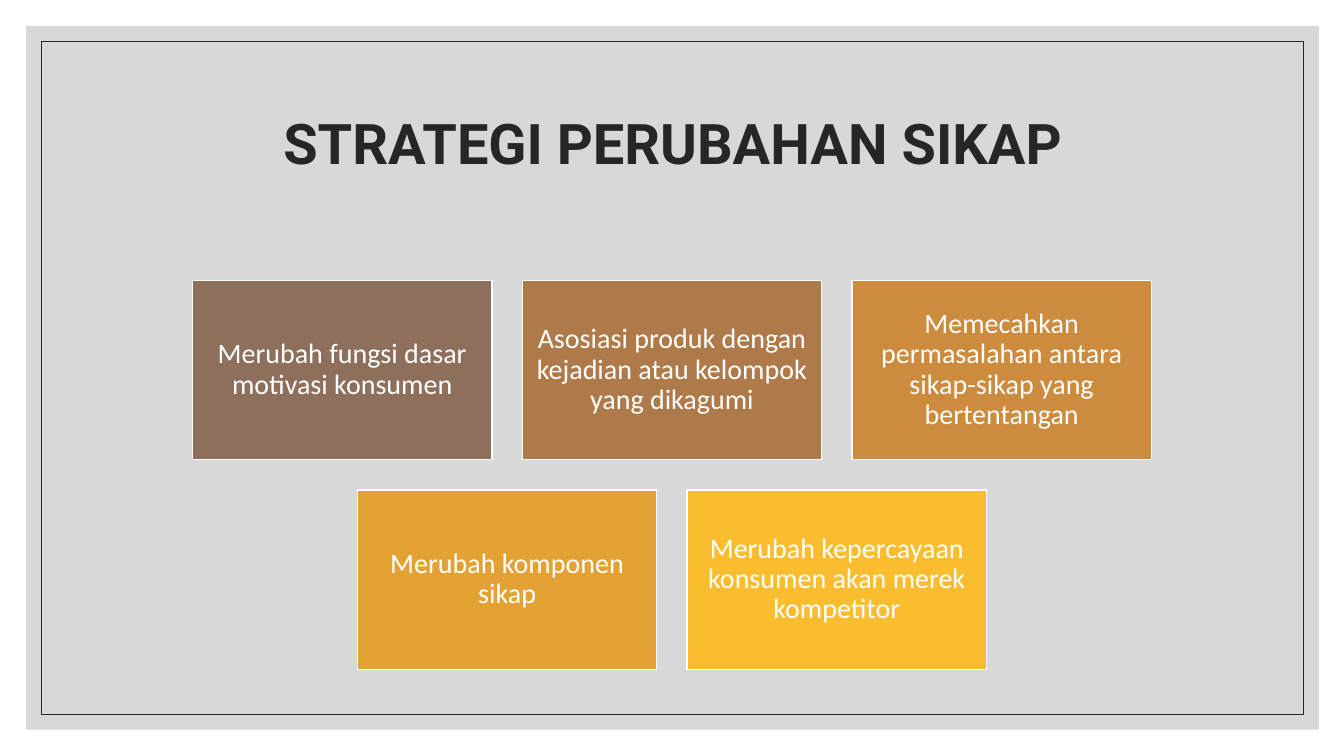
from dataclasses import dataclass

from lxml.etree import SubElement
from pptx import Presentation
from pptx.dml.color import RGBColor
from pptx.enum.shapes import MSO_SHAPE
from pptx.enum.text import MSO_ANCHOR, PP_ALIGN
from pptx.oxml.ns import qn
from pptx.shapes.autoshape import Shape
from pptx.slide import Slide
from pptx.util import Inches, Pt


@dataclass(frozen=True)
class Theme:
    """Colours, fonts and type sizes of the slide."""
    panel: str = "BFBFBF"
    panel_alpha: int = 60
    dark: str = "262626"
    white: str = "FFFFFF"
    title_font: str = "Roboto"
    card_font: str = "Calibri"
    title_size: int = 40
    card_size: int = 20


@dataclass(frozen=True)
class Box:
    """A rectangle in inches."""
    left: float
    top: float
    width: float
    height: float


@dataclass(frozen=True)
class Card:
    """A strategy and its card colour."""
    text: str
    fill: str


THEME = Theme()
SLIDE_W, SLIDE_H = 13.33, 7.5
CARD_W, CARD_H, GAP = 2.97, 1.78, 0.3
CARDS_TOP = 2.78
TITLE = Box(1.17, 0.7, 11, 1.5)
CARD_ROWS = [
    [
        Card("Merubah fungsi dasar motivasi konsumen", "8D6F5B"),
        Card("Asosiasi produk dengan kejadian atau kelompok yang dikagumi", "AE7A4A"),
        Card("Memecahkan permasalahan antara sikap-sikap yang bertentangan", "CC8B3D"),
    ],
    [
        Card("Merubah komponen sikap", "E4A234"),
        Card("Merubah kepercayaan konsumen akan merek kompetitor", "FABD2F"),
    ],
]


def add_rect(s: Slide, box: Box, fill: str | None = None,
             line: str | None = None, weight: float = 1) -> Shape:
    """Draw a flat rectangle with an optional fill and outline."""
    sp = s.shapes.add_shape(MSO_SHAPE.RECTANGLE, Inches(box.left), Inches(box.top),
                            Inches(box.width), Inches(box.height))
    sp.shadow.inherit = False
    if fill:
        sp.fill.solid()
        sp.fill.fore_color.rgb = RGBColor.from_string(fill)
    else:
        sp.fill.background()
    if line:
        sp.line.color.rgb = RGBColor.from_string(line)
        sp.line.width = Pt(weight)
    else:
        sp.line.fill.background()
    return sp


def set_alpha(sp: Shape, percent: int) -> None:
    """Make the solid fill of a shape partly transparent."""
    clr = sp.fill._xPr.find(qn("a:solidFill"))[0]
    SubElement(clr, qn("a:alpha")).set("val", str(percent * 1000))


def write_text(sp: Shape, text: str, font: str, size: int, color: str,
               bold: bool = False) -> None:
    """Write one centred paragraph in the middle of a shape."""
    tf = sp.text_frame
    tf.word_wrap = True
    tf.vertical_anchor = MSO_ANCHOR.MIDDLE
    tf.text = text
    p = tf.paragraphs[0]
    p.alignment = PP_ALIGN.CENTER
    p.line_spacing = 0.9
    r = p.runs[0]
    r.font.name = font
    r.font.size = Pt(size)
    r.font.bold = bold
    r.font.color.rgb = RGBColor.from_string(color)


def add_frame(s: Slide) -> None:
    """Draw the grey panel and the thin border inside it."""
    panel = add_rect(s, Box(0.26, 0.26, 12.82, 6.98), fill=THEME.panel)
    set_alpha(panel, THEME.panel_alpha)
    add_rect(s, Box(0.41, 0.41, 12.52, 6.68), line=THEME.dark, weight=0.5)


def add_title(s: Slide, text: str) -> None:
    """Add the slide heading."""
    sp = s.shapes.add_textbox(Inches(TITLE.left), Inches(TITLE.top),
                              Inches(TITLE.width), Inches(TITLE.height))
    write_text(sp, text, THEME.title_font, THEME.title_size, THEME.dark, bold=True)


def add_card(s: Slide, card: Card, left: float, top: float) -> None:
    """Draw one strategy card."""
    sp = add_rect(s, Box(left, top, CARD_W, CARD_H), card.fill, THEME.white)
    tf = sp.text_frame
    tf.margin_left = tf.margin_right = Inches(0.08)
    tf.margin_top = tf.margin_bottom = Inches(0.08)
    write_text(sp, card.text, THEME.card_font, THEME.card_size, THEME.white)


def add_cards(s: Slide) -> None:
    """Lay out the card rows, each centred on the slide."""
    for i, row in enumerate(CARD_ROWS):
        row_w = len(row) * (CARD_W + GAP) - GAP
        left = (SLIDE_W - row_w) / 2
        for j, card in enumerate(row):
            add_card(s, card, left + j * (CARD_W + GAP), CARDS_TOP + i * (CARD_H + GAP))


def main() -> None:
    """Build and save the slide."""
    prs = Presentation()
    prs.slide_width, prs.slide_height = Inches(SLIDE_W), Inches(SLIDE_H)
    s = prs.slides.add_slide(prs.slide_layouts[6])
    add_frame(s)
    add_cards(s)
    add_title(s, "STRATEGI PERUBAHAN SIKAP")
    prs.save("out.pptx")


if __name__ == "__main__":
    main()
